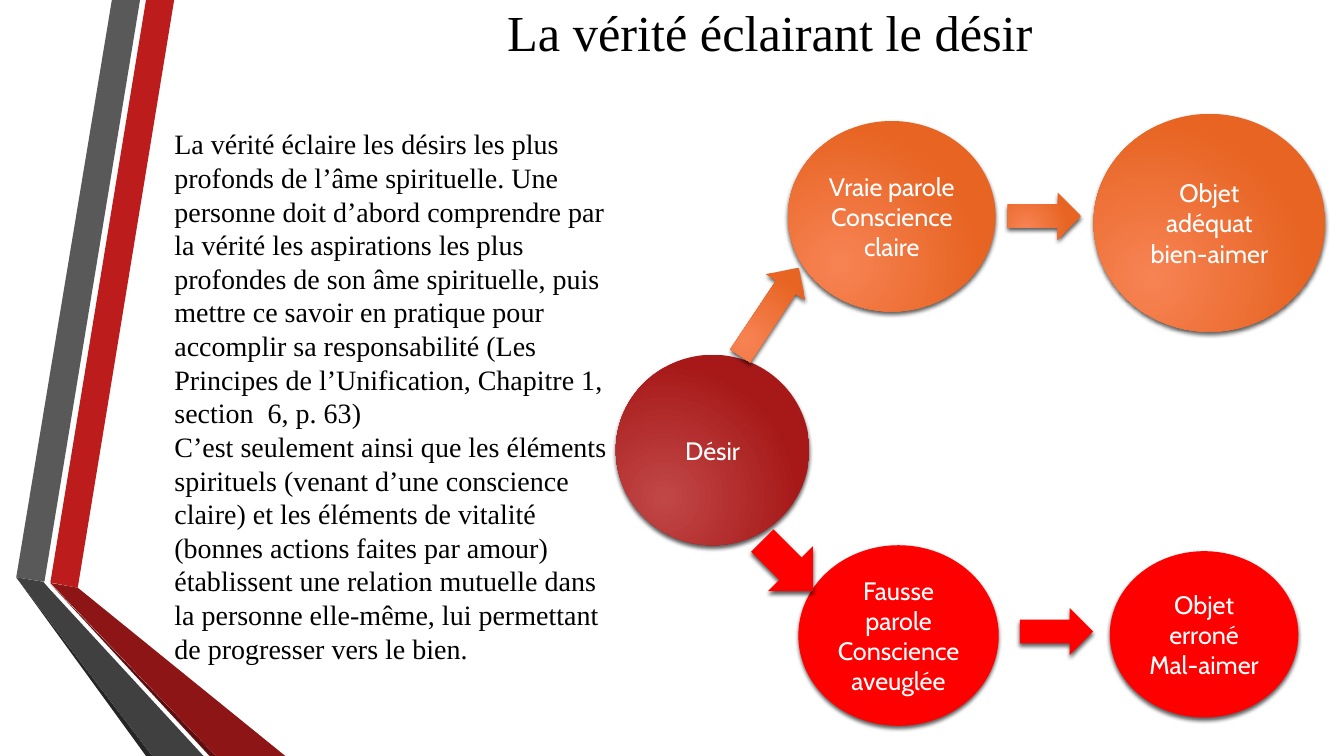
from lxml import etree
from pptx import Presentation
from pptx.dml.color import RGBColor
from pptx.enum.shapes import MSO_SHAPE
from pptx.enum.text import MSO_ANCHOR, MSO_AUTO_SIZE, PP_ALIGN
from pptx.oxml import parse_xml
from pptx.oxml.ns import nsdecls, qn
from pptx.util import Cm, Pt

OVAL, ARROW = MSO_SHAPE.OVAL, MSO_SHAPE.RIGHT_ARROW
CENTER, LEFT = PP_ALIGN.CENTER, PP_ALIGN.LEFT
MIDDLE, TOP = MSO_ANCHOR.MIDDLE, MSO_ANCHOR.TOP
NO_AUTOFIT = MSO_AUTO_SIZE.NONE
SERIF, SANS = "Times New Roman", "Cabin"

BLACK = RGBColor(0x00, 0x00, 0x00)
WHITE = RGBColor(0xFF, 0xFF, 0xFF)
RED = RGBColor(0xFF, 0x00, 0x00)
ORANGE = (RGBColor(0xF7, 0x83, 0x54), RGBColor(0xE7, 0x64, 0x22))
CRIMSON = (RGBColor(0xC1, 0x47, 0x47), RGBColor(0xA7, 0x19, 0x19))

TITLE = "La vérité éclairant le désir"
TITLE_BOX = (5.49, 0, 27.84, 1.6)
EXPLANATION = [
    "La vérité éclaire les désirs les plus profonds de l’âme spirituelle. "
    "Une personne doit d’abord comprendre par la vérité les aspirations les "
    "plus profondes de son âme spirituelle, puis mettre ce savoir en pratique "
    "pour accomplir sa responsabilité (Les Principes de l’Unification, "
    "Chapitre 1, section  6, p. 63)",
    "C’est seulement ainsi que les éléments spirituels (venant d’une "
    "conscience claire) et les éléments de vitalité (bonnes actions faites "
    "par amour) établissent une relation mutuelle dans la personne elle-même, "
    "lui permettant de progresser vers le bien.",
]
EXPLANATION_BOX = (4.14, 3.07, 11.51, 13.94)

RIBBONS = [
    (RGBColor(0xBC, 0x1C, 0x1C),
     [(1.27, 14.68), (1.96, 14.81), (4.39, 0), (3.68, 0)]),
    (RGBColor(0x59, 0x59, 0x59),
     [(3.53, 0), (2.82, 0), (0.41, 14.55), (1.12, 14.66)]),
    (RGBColor(0x26, 0x26, 0x26),
     [(0.41, 14.55), (3.68, 19.05), (3.84, 19.05)]),
    (RGBColor(0x5E, 0x0E, 0x0E),
     [(1.27, 14.71), (5.28, 19.05), (5.44, 19.05)]),
    (RGBColor(0x8D, 0x15, 0x15),
     [(1.27, 14.69), (5.44, 19.05), (7.19, 19.05), (1.96, 14.81)]),
    (RGBColor(0x40, 0x40, 0x40),
     [(5.13, 19.05), (1.22, 14.81), (1.09, 14.66), (0.41, 14.55),
      (3.84, 19.05)]),
]
IDEAS = [
    (["Désir"], CRIMSON, (15.52, 8.94, 4.88, 4.8)),
    (["Fausse parole", "Conscience aveuglée"], RED, (20.12, 13.74, 5.05, 4.55)),
    (["Vraie parole", "Conscience claire"], ORANGE, (19.86, 3.05, 5.23, 4.8)),
    (["Objet erroné", "Mal-aimer"], RED, (27.97, 13.89, 4.75, 4.19)),
    (["Objet adéquat", "bien-aimer"], ORANGE, (27.56, 2.87, 5.84, 5.49)),
]
STEPS = [
    (ORANGE, (18.06, 7.26, 2.67, 1.19), 303.6),
    (ORANGE, (25.4, 4.85, 1.85, 1.19), 0),
    (RED, (18.95, 13.46, 1.8, 1.6), 45),
    (RED, (25.7, 15.32, 1.85, 1.19), 0),
]


def write(shape, lines, font_name, size, color, align, anchor):
    """Fill a shape with uniformly formatted paragraphs."""
    frame = shape.text_frame
    frame.word_wrap = True
    frame.auto_size = NO_AUTOFIT
    frame.vertical_anchor = anchor
    frame.text = "\n".join(lines)
    for paragraph in frame.paragraphs:
        paragraph.alignment = align
        paragraph.space_before = paragraph.space_after = Pt(0)
        paragraph.line_spacing = 1.0
        paragraph.font.name = font_name
        paragraph.font.size = Pt(size)
        paragraph.font.color.rgb = color


def place(shape, box):
    """Move a placeholder to a box given in centimetres."""
    shape.left, shape.top, shape.width, shape.height = map(Cm, box)


def paint(shape, fill):
    """Apply a solid colour or a radial pair of colours, without outline."""
    shape.line.fill.background()
    if isinstance(fill, RGBColor):
        shape.fill.solid()
        shape.fill.fore_color.rgb = fill
        return
    inner, outer = fill
    shape.fill.gradient()
    gradient = shape._element.spPr.find(qn("a:gradFill"))
    gradient.getparent().replace(gradient, parse_xml(
        f'<a:gradFill {nsdecls("a")} rotWithShape="1"><a:gsLst>'
        f'<a:gs pos="0"><a:srgbClr val="{inner}"/></a:gs>'
        f'<a:gs pos="100000"><a:srgbClr val="{outer}"/></a:gs></a:gsLst>'
        '<a:path path="circle"><a:fillToRect l="50000" t="100000" '
        'r="100000" b="50000"/></a:path></a:gradFill>'))


def add_raised(slide, preset, fill, box):
    """Add a preset shape with a soft shadow below it."""
    shape = slide.shapes.add_shape(preset, *map(Cm, box))
    paint(shape, fill)
    shape.shadow.inherit = False
    effects = shape._element.spPr.find(qn("a:effectLst"))
    shadow = etree.SubElement(
        effects, qn("a:outerShdw"), blurRad=str(Pt(3)), dist=str(Pt(2)),
        dir="5400000", algn="ctr", rotWithShape="0")
    black = etree.SubElement(shadow, qn("a:srgbClr"), val=str(BLACK))
    etree.SubElement(black, qn("a:alpha"), val="64000")
    return shape


def main():
    """Build the slide on truth enlightening desire."""
    deck = Presentation()
    deck.slide_width, deck.slide_height = Cm(33.87), Cm(19.05)
    slide = deck.slides.add_slide(deck.slide_layouts[1])
    title, explanation = slide.shapes.title, slide.placeholders[1]

    for color, corners in RIBBONS:
        points = [(Cm(x), Cm(y)) for x, y in corners]
        outline = slide.shapes.build_freeform(*points[0])
        outline.add_line_segments(points[1:], close=True)
        ribbon = outline.convert_to_shape()
        paint(ribbon, color)
        ribbon.shadow.inherit = False
        title._element.addprevious(ribbon._element)

    place(title, TITLE_BOX)
    write(title, [TITLE], SERIF, 36, BLACK, CENTER, MIDDLE)
    place(explanation, EXPLANATION_BOX)
    write(explanation, EXPLANATION, SERIF, 20, BLACK, LEFT, TOP)
    for paragraph in explanation.text_frame.paragraphs:
        properties = paragraph._p.get_or_add_pPr()
        properties.set("marL", "0")
        properties.set("indent", "0")
        bullet = parse_xml(f'<a:buNone {nsdecls("a")}/>')
        properties.find(qn("a:defRPr")).addprevious(bullet)

    for lines, fill, box in IDEAS:
        idea = add_raised(slide, OVAL, fill, box)
        write(idea, lines, SANS, 18, WHITE, CENTER, MIDDLE)
    for fill, box, angle in STEPS:
        add_raised(slide, ARROW, fill, box).rotation = angle

    deck.save("out.pptx")


if __name__ == "__main__":
    main()
